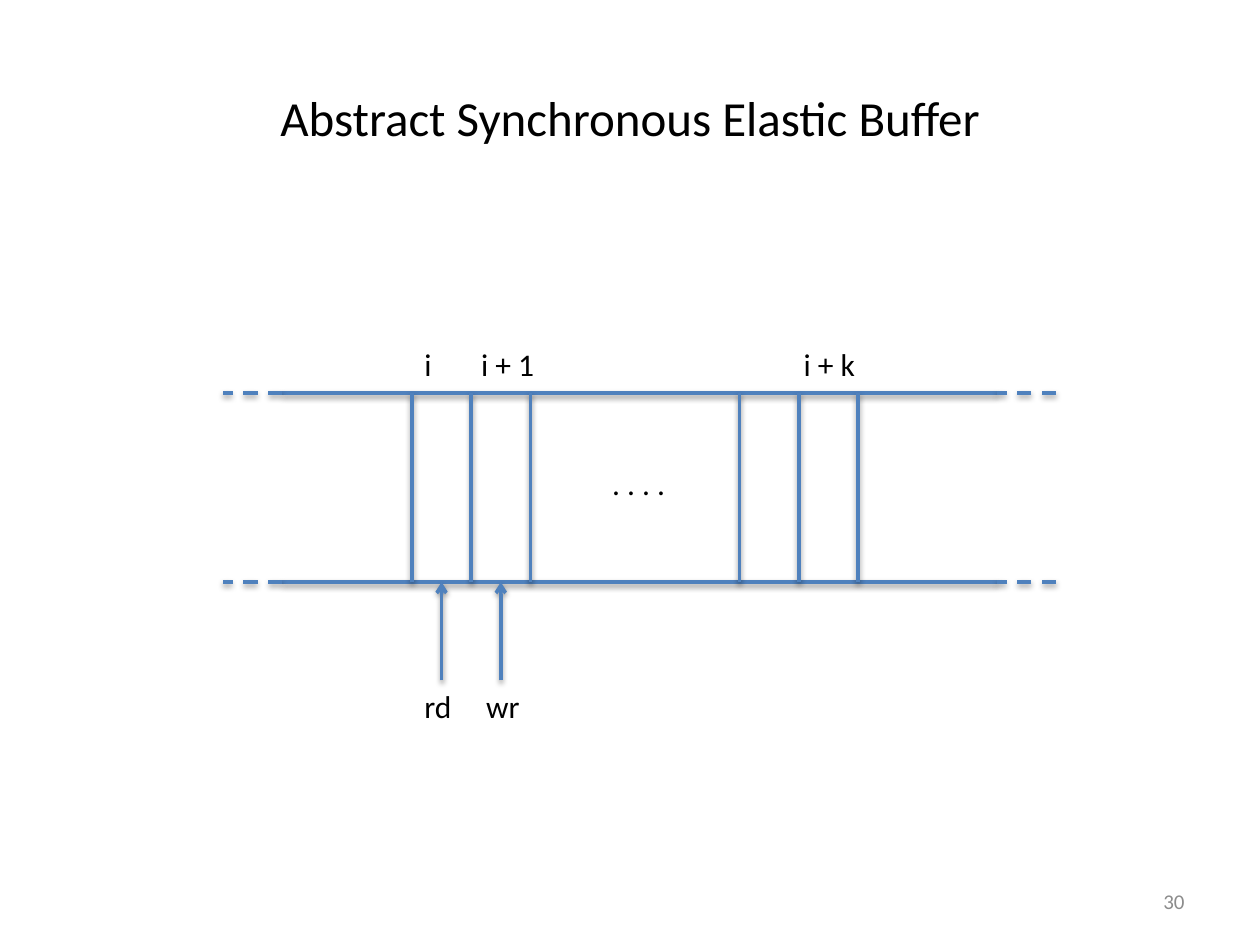
from dataclasses import dataclass

from lxml.etree import SubElement
from pptx import Presentation
from pptx.dml.color import RGBColor
from pptx.enum.dml import MSO_LINE
from pptx.enum.shapes import MSO_CONNECTOR
from pptx.enum.text import MSO_ANCHOR as Anchor, PP_ALIGN as Align
from pptx.oxml.ns import qn
from pptx.slide import Slide
from pptx.util import Inches, Pt

BLACK = RGBColor(0x00, 0x00, 0x00)
BLUE = RGBColor(0x4F, 0x81, 0xBD)
GRAY = RGBColor(0x8C, 0x8C, 0x8C)

TOP, BOTTOM = 3.12, 4.62
LEFT, RIGHT = 2.24, 7.91
CELL = 0.47
FIRST_CELL, LAST_CELLS = 3.27, 5.87
POINTER_BASE = 5.4
LABEL_TOP = 2.69
LABEL_HEIGHT = 0.4


@dataclass(frozen=True)
class Line:
    x1: float
    y1: float
    x2: float
    y2: float
    dashed: bool = False
    arrow: bool = False


@dataclass(frozen=True)
class Label:
    text: str
    left: float
    top: float
    width: float


LABELS = [
    Label("i", FIRST_CELL, LABEL_TOP, 0.3),
    Label("i + 1", 3.72, LABEL_TOP, 0.63),
    Label("i + k", 6.28, LABEL_TOP, 0.63),
    Label(". . . .", 4.76, 3.63, 0.63),
    Label("rd", FIRST_CELL, POINTER_BASE, 0.42),
    Label("wr", 3.76, POINTER_BASE, 0.48),
]


def buffer_lines() -> list[Line]:
    lines = []
    for y in (TOP, BOTTOM):
        lines += [
            Line(LEFT, y, RIGHT, y),
            Line(LEFT, y, LEFT - CELL, y, dashed=True),
            Line(RIGHT + CELL, y, RIGHT, y, dashed=True),
        ]
    for start in (FIRST_CELL, LAST_CELLS):
        for index in range(3):
            x = start + index * CELL
            lines.append(Line(x, TOP, x, BOTTOM))
    for index in range(2):
        x = FIRST_CELL + (index + 0.5) * CELL
        lines.append(Line(x, POINTER_BASE, x, BOTTOM, arrow=True))
    return lines


def add_shadow(properties) -> None:
    effects = SubElement(properties, qn("a:effectLst"))
    shadow = SubElement(
        effects, qn("a:outerShdw"), blurRad=str(Pt(3.1)), dist=str(Pt(1.6)),
        dir="5400000", rotWithShape="0",
    )
    color = SubElement(shadow, qn("a:srgbClr"), val=str(BLACK))
    SubElement(color, qn("a:alpha"), val="38000")


def add_line(slide: Slide, line: Line) -> None:
    connector = slide.shapes.add_connector(
        MSO_CONNECTOR.STRAIGHT,
        Inches(line.x1), Inches(line.y1), Inches(line.x2), Inches(line.y2),
    )
    connector.line.color.rgb = BLUE
    connector.line.width = Pt(2)
    if line.dashed:
        connector.line.dash_style = MSO_LINE.DASH
    if line.arrow:
        SubElement(connector.line._get_or_add_ln(), qn("a:tailEnd"), type="arrow")
    add_shadow(connector._element.spPr)


def add_text(
    slide: Slide, text: str, *, left: float, top: float, width: float,
    height: float = LABEL_HEIGHT, size: float = 18, color: RGBColor = BLACK,
    align: Align = Align.LEFT, anchor: Anchor = Anchor.TOP, wrap: bool = False,
) -> None:
    shape = slide.shapes.add_textbox(
        Inches(left), Inches(top), Inches(width), Inches(height)
    )
    frame = shape.text_frame
    frame.word_wrap = wrap
    frame.vertical_anchor = anchor
    paragraph = frame.paragraphs[0]
    paragraph.alignment = align
    run = paragraph.add_run()
    run.text = text
    run.font.name = "Calibri"
    run.font.size = Pt(size)
    run.font.color.rgb = color


def main() -> None:
    presentation = Presentation()
    presentation.slide_width = Inches(10)
    presentation.slide_height = Inches(7.5)
    slide = presentation.slides.add_slide(presentation.slide_layouts[6])
    add_text(
        slide, "Abstract Synchronous Elastic Buffer", left=0.5, top=0.3, width=9,
        height=1.25, size=28, align=Align.CENTER, anchor=Anchor.MIDDLE, wrap=True,
    )
    for line in buffer_lines():
        add_line(slide, line)
    for label in LABELS:
        add_text(slide, label.text, left=label.left, top=label.top, width=label.width)
    add_text(
        slide, "30", left=7.17, top=6.95, width=2.33, size=12, color=GRAY,
        align=Align.RIGHT, anchor=Anchor.MIDDLE, wrap=True,
    )
    presentation.save("out.pptx")


if __name__ == "__main__":
    main()
